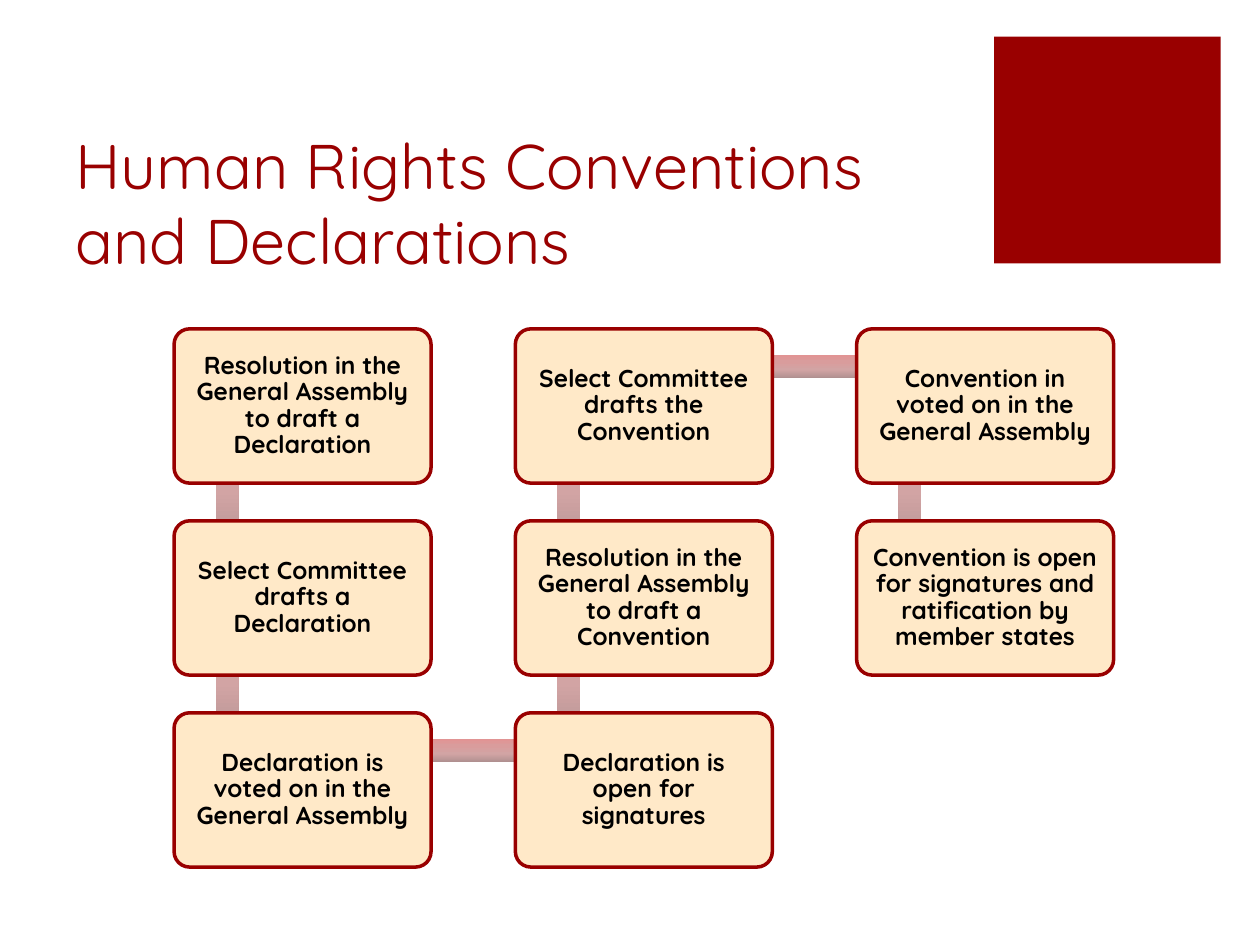
"""Build the slide on how human rights declarations and conventions are made."""
from itertools import pairwise

from lxml.etree import SubElement
from pptx import Presentation
from pptx.dml.color import RGBColor as RGB
from pptx.enum.shapes import MSO_SHAPE as SHAPE
from pptx.enum.text import MSO_ANCHOR as ANCHOR, MSO_AUTO_SIZE as AUTO, PP_ALIGN as ALIGN
from pptx.oxml.ns import qn
from pptx.util import Cm, Pt

COLORS = {"red": "990000", "cream": "FFE9C8", "black": "000000"}
BAR_STOPS = [(0, "B09090"), (35, "D2A4A4"), (70, "D99C9C"), (100, "E19494")]
FONT = "Quicksand"
LEFT, TOP = 3.51, 6.63
PITCH_X, PITCH_Y = 6.88, 3.87
BOX_W, BOX_H = 5.18, 3.11
BAR = 0.46
STEPS = [
    (0, 0, "Resolution in the General Assembly to draft a Declaration"),
    (0, 1, "Select Committee drafts a Declaration"),
    (0, 2, "Declaration is voted on in the General Assembly"),
    (1, 2, "Declaration is open for signatures"),
    (1, 1, "Resolution in the General Assembly to draft a Convention"),
    (1, 0, "Select Committee drafts the Convention"),
    (2, 0, "Convention in voted on in the General Assembly"),
    (2, 1, "Convention is open for signatures and ratification by member states"),
]


def add_block(kind, x, y, w, h):
    sp = s.shapes.add_shape(kind, Cm(x), Cm(y), Cm(w), Cm(h))
    sp.shadow.inherit = False
    sp.line.fill.background()
    return sp


def style_text(tf, text, size, color, anchor, align):
    tf.text = text
    tf.word_wrap = True
    tf.auto_size = AUTO.NONE
    tf.vertical_anchor = anchor
    p = tf.paragraphs[0]
    p.alignment = align
    font = p.runs[0].font
    font.name, font.size = FONT, Pt(size)
    font.color.rgb = RGB.from_string(COLORS[color])
    return p


prs = Presentation()
prs.slide_width, prs.slide_height = Cm(25.4), Cm(19.05)
s = prs.slides.add_slide(prs.slide_layouts[5])

square = add_block(SHAPE.RECTANGLE, 20.04, 0.74, 4.57, 4.57)
square.fill.solid()
square.fill.fore_color.rgb = RGB.from_string(COLORS["red"])

title = s.shapes.title
title.left, title.top, title.width, title.height = Cm(1.27), Cm(2.54), Cm(18.08), Cm(3.18)
style_text(title.text_frame, "Human Rights Conventions and Declarations", 36, "red",
           ANCHOR.BOTTOM, ALIGN.LEFT)

for (col, row, _), (next_col, next_row, _) in pairwise(STEPS):
    x = LEFT + min(col, next_col) * PITCH_X
    y = TOP + min(row, next_row) * PITCH_Y
    if col == next_col:
        bar = add_block(SHAPE.RECTANGLE, x + 0.84, y + 0.76, BAR, PITCH_Y)
    else:
        bar = add_block(SHAPE.RECTANGLE, x + 1.07, y + 0.53, PITCH_X, BAR)
    bar.fill.gradient()
    bar.fill.gradient_angle = 90
    stops = next(bar.element.iter(qn("a:gsLst")))
    stops.clear()
    for percent, color in BAR_STOPS:
        stop = SubElement(stops, qn("a:gs"), pos=str(percent * 1000))
        SubElement(stop, qn("a:srgbClr"), val=color)

for col, row, text in STEPS:
    box = add_block(SHAPE.ROUNDED_RECTANGLE, LEFT + col * PITCH_X, TOP + row * PITCH_Y,
                    BOX_W, BOX_H)
    box.adjustments[0] = 0.1
    box.fill.solid()
    box.fill.fore_color.rgb = RGB.from_string(COLORS["cream"])
    box.line.color.rgb = RGB.from_string(COLORS["red"])
    box.line.width = Pt(2)
    tf = box.text_frame
    tf.margin_left = tf.margin_right = tf.margin_top = tf.margin_bottom = Cm(0.2)
    p = style_text(tf, text, 14, "black", ANCHOR.MIDDLE, ALIGN.CENTER)
    p.line_spacing = 0.9
    p.runs[0].font.bold = True

prs.save("out.pptx")
